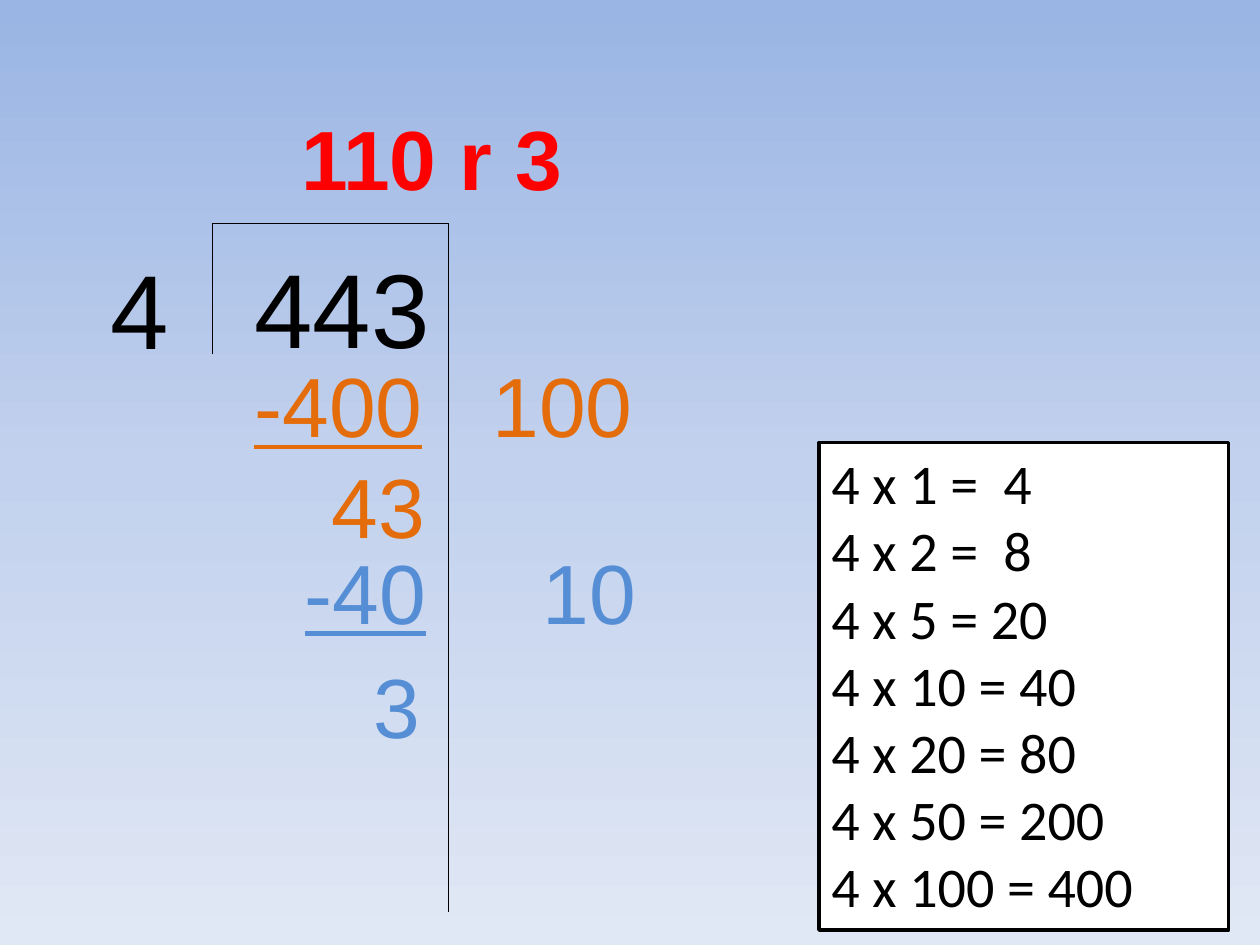
import copy

import lxml.etree
import pptx
import pptx.dml.color
import pptx.enum.shapes
import pptx.enum.text
import pptx.oxml.ns
import pptx.util

Cm = pptx.util.Cm
RGBColor = pptx.dml.color.RGBColor
qn = pptx.oxml.ns.qn

BLACK = RGBColor(0x00, 0x00, 0x00)
WHITE = RGBColor(0xFF, 0xFF, 0xFF)
RED = RGBColor(0xFF, 0x00, 0x00)
ORANGE = RGBColor(0xE4, 0x6C, 0x0A)
BLUE = RGBColor(0x55, 0x8E, 0xD5)
SKY = [
    (0, RGBColor(0x9A, 0xB5, 0xE4)),
    (0.5, RGBColor(0xC2, 0xD1, 0xED)),
    (1, RGBColor(0xE1, 0xE8, 0xF5)),
]

BRACKET_LEFT, BRACKET_RIGHT, BRACKET_TOP = 4.29, 9.04, 4.5
QUOTIENT_TAB = 4.8
PRODUCT_TAB = 3.47


def add_run(p, text, font="Arial", size=48, color=BLACK, bold=None, underline=None):
    r = p.add_run()
    r.text = text
    r.font.name = font
    r.font.size = pptx.util.Pt(size)
    r.font.color.rgb = color
    r.font.bold = bold
    r.font.underline = underline


class Deck:
    def __init__(self, width, height):
        self.prs = pptx.Presentation()
        self.prs.slide_width = Cm(width)
        self.prs.slide_height = Cm(height)
        self.s = None

    def add_slide(self):
        self.s = self.prs.slides.add_slide(self.prs.slide_layouts[6])

    def background(self, stops):
        fill = self.s.background.fill
        fill.gradient()
        fill.gradient_angle = 270
        first = self.s.element.xpath(".//a:gs")[0]
        first.addnext(copy.deepcopy(first))
        for stop, (position, color) in zip(fill.gradient_stops, stops):
            stop.position = position
            stop.color.rgb = color

    def group(self):
        return self.s.shapes.add_group_shape().shapes

    def line(self, shapes, x1, y1, x2, y2):
        kind = pptx.enum.shapes.MSO_CONNECTOR.STRAIGHT
        cx = shapes.add_connector(kind, Cm(x1), Cm(y1), Cm(x2), Cm(y2))
        cx.line.color.rgb = BLACK
        cx.line.width = pptx.util.Pt(0.75)
        lxml.etree.SubElement(cx.element.spPr, qn("a:effectLst"))

    def tab_stop(self, p, position):
        tabs = lxml.etree.SubElement(p._p.get_or_add_pPr(), qn("a:tabLst"))
        lxml.etree.SubElement(tabs, qn("a:tab"), pos=str(Cm(position)), algn="l")

    def text(self, x, y, w, h, text, shapes=None, **fmt):
        shapes = self.s.shapes if shapes is None else shapes
        tf = shapes.add_textbox(Cm(x), Cm(y), Cm(w), Cm(h)).text_frame
        tf.word_wrap = True
        tf.auto_size = pptx.enum.text.MSO_AUTO_SIZE.SHAPE_TO_FIT_TEXT
        p = tf.paragraphs[0]
        add_run(p, text, **fmt)
        return p

    def subtraction(self, x, y, w, h, amount, quotient, color):
        p = self.text(x, y, w, h, amount, color=color, underline=True)
        self.tab_stop(p, QUOTIENT_TAB)
        add_run(p, "\t" + quotient, color=color, underline=False)

    def fact_box(self, x, y, w, h, facts):
        kind = pptx.enum.shapes.MSO_SHAPE.RECTANGLE
        sp = self.s.shapes.add_shape(kind, Cm(x), Cm(y), Cm(w), Cm(h))
        sp.shadow.inherit = False
        sp.fill.solid()
        sp.fill.fore_color.rgb = WHITE
        sp.line.color.rgb = BLACK
        sp.line.width = pptx.util.Pt(2)
        tf = sp.text_frame
        tf.word_wrap = True
        tf.vertical_anchor = pptx.enum.text.MSO_ANCHOR.TOP
        tf.auto_size = pptx.enum.text.MSO_AUTO_SIZE.SHAPE_TO_FIT_TEXT
        for i, fact in enumerate(facts):
            p = tf.add_paragraph() if i else tf.paragraphs[0]
            p.alignment = pptx.enum.text.PP_ALIGN.LEFT
            if "\t" in fact:
                self.tab_stop(p, PRODUCT_TAB)
            add_run(p, fact, font="Calibri", size=32)


def main():
    deck = Deck(25.4, 19.05)
    deck.add_slide()
    deck.background(SKY)

    division = deck.group()
    deck.line(division, BRACKET_LEFT, 7.14, BRACKET_LEFT, BRACKET_TOP)
    deck.line(division, BRACKET_LEFT, BRACKET_TOP, BRACKET_RIGHT, BRACKET_TOP)
    deck.line(division, BRACKET_RIGHT, BRACKET_TOP, BRACKET_RIGHT, 18.39)
    deck.text(4.88, 4.78, 4.93, 3.33, "443", division, size=60)
    deck.text(1.98, 4.8, 1.93, 3.33, "4", division, size=60)

    facts = ["4 x 1 =\t4", "4 x 2 =\t8"]
    facts += [f"4 x {n} = {4 * n}" for n in (5, 10, 20, 50, 100)]
    deck.fact_box(16.51, 8.92, 8.26, 9.83, facts)

    deck.subtraction(4.88, 7.01, 10.01, 2.31, "-400", "100", ORANGE)
    deck.text(6.43, 9.04, 5.92, 2.31, "43", color=ORANGE)
    deck.subtraction(5.89, 10.77, 7.72, 2.31, "-40", "10", BLUE)
    deck.text(7.29, 13.08, 3.53, 2.31, "3", color=BLUE)
    deck.text(5.82, 2.03, 6.45, 2.31, "110 r 3", color=RED, bold=True)

    deck.prs.save("out.pptx")


if __name__ == "__main__":
    main()
